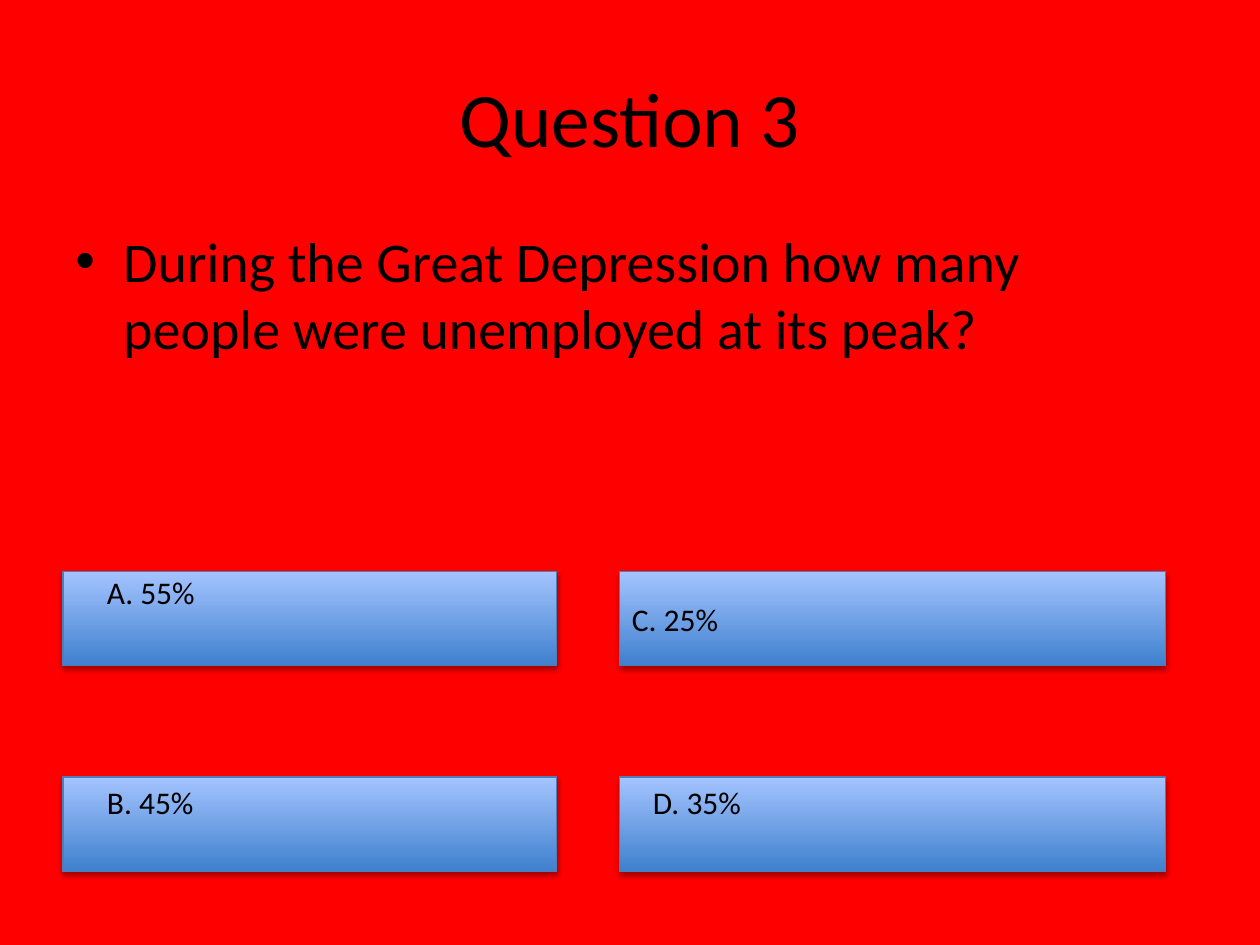
from pptx import Presentation
from pptx import util as u
from pptx.dml.color import RGBColor
from pptx.enum import shapes, text
from pptx.oxml import parse_xml
from pptx.oxml.ns import nsdecls

THEME = {
    "font": "Calibri", "title": 44, "question": 32, "answer": 18,
    "ink": "000000", "background": "FF0000", "border": "4B7EBC",
    "button": ("3F80CE", "A4C4FF"),
}

presentation = Presentation()
presentation.slide_width, presentation.slide_height = u.Inches(10), u.Inches(7.5)
COLUMN = presentation.slide_width / 120
ROW = presentation.slide_height / 90


def cells(left, top, width, height):
    """Turn grid columns and rows into slide lengths."""
    return [round(n * step) for n, step in
            zip((left, top, width, height), (COLUMN, ROW, COLUMN, ROW))]


def write(shape, words, size, anchor, alignment=text.PP_ALIGN.LEFT):
    """Put one styled paragraph in a shape and return it."""
    frame = shape.text_frame
    frame.text = words
    frame.word_wrap = True
    frame.vertical_anchor = anchor
    paragraph = frame.paragraphs[0]
    paragraph.alignment = alignment
    font = paragraph.runs[0].font
    font.name, font.size = THEME["font"], u.Pt(THEME[size])
    font.color.rgb = RGBColor.from_string(THEME["ink"])
    return paragraph


# Slide and background
slide = presentation.slides.add_slide(presentation.slide_layouts.get_by_name("Title Only"))
slide.background.fill.solid()
slide.background.fill.fore_color.rgb = RGBColor.from_string(THEME["background"])

# Title
title = slide.shapes.title
title.left, title.top, title.width, title.height = cells(6, 3.6, 108, 15)
write(title, "Question 3", "title", text.MSO_ANCHOR.MIDDLE, text.PP_ALIGN.CENTER)

# Bulleted question
question = slide.shapes.add_textbox(*cells(6, 21, 108, 21))
paragraph = write(question, "During the Great Depression how many people were unemployed at its peak?",
                  "question", text.MSO_ANCHOR.TOP)
properties = paragraph._p.get_or_add_pPr()
properties.set("marL", str(u.Inches(0.38)))
properties.set("indent", str(u.Inches(-0.38)))
paragraph.space_before = u.Pt(0.2 * THEME["question"])
properties.append(parse_xml(f'<a:buFont {nsdecls("a")} typeface="Arial"/>'))
properties.append(parse_xml(f'<a:buChar {nsdecls("a")} char="•"/>'))

# Answer buttons: left, top, width, text inside
buttons = [
    (59, 54.4, 52, "C. 25%"),
    (59, 74, 52, None),
    (6, 54.4, 47, None),
    (6, 74, 47, None),
]
for left, top, width, answer in buttons:
    button = slide.shapes.add_shape(shapes.MSO_SHAPE.ACTION_BUTTON_CUSTOM,
                                    *cells(left, top, width, 9))
    button.fill.gradient()
    button.fill.gradient_angle = 90
    for stop, color in zip(button.fill.gradient_stops, THEME["button"]):
        stop.color.rgb = RGBColor.from_string(color)
    button.line.color.rgb = RGBColor.from_string(THEME["border"])
    button.line.width = u.Pt(0.75)
    button.shadow.inherit = False
    effects = button._element.spPr.find("{*}effectLst")
    effects.append(parse_xml(
        f'<a:outerShdw {nsdecls("a")} blurRad="{u.Pt(3.1)}" dist="{u.Pt(1.8)}" '
        'dir="5400000" rotWithShape="0"><a:srgbClr val="000000">'
        '<a:alpha val="35000"/></a:srgbClr></a:outerShdw>'))
    if answer:
        write(button, answer, "answer", text.MSO_ANCHOR.MIDDLE)

# Answer labels over the buttons: left, top, width, text
labels = [
    (9, 54, 15, "A. 55%"),
    (9, 74, 20, "B. 45%"),
    (61, 74, 12, "D. 35%"),
]
for left, top, width, answer in labels:
    label = slide.shapes.add_textbox(*cells(left, top, width, 4.8))
    write(label, answer, "answer", text.MSO_ANCHOR.TOP)
    label.text_frame.auto_size = text.MSO_AUTO_SIZE.SHAPE_TO_FIT_TEXT

presentation.save("out.pptx")
